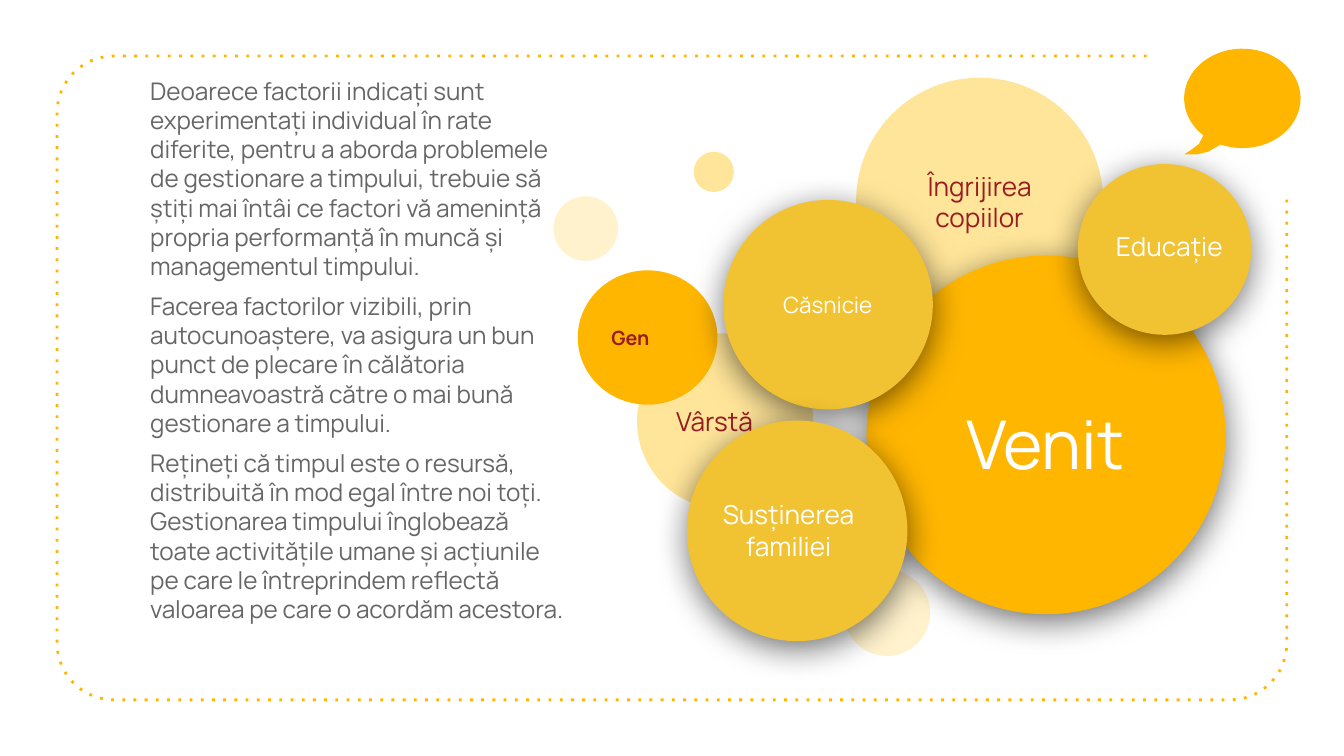
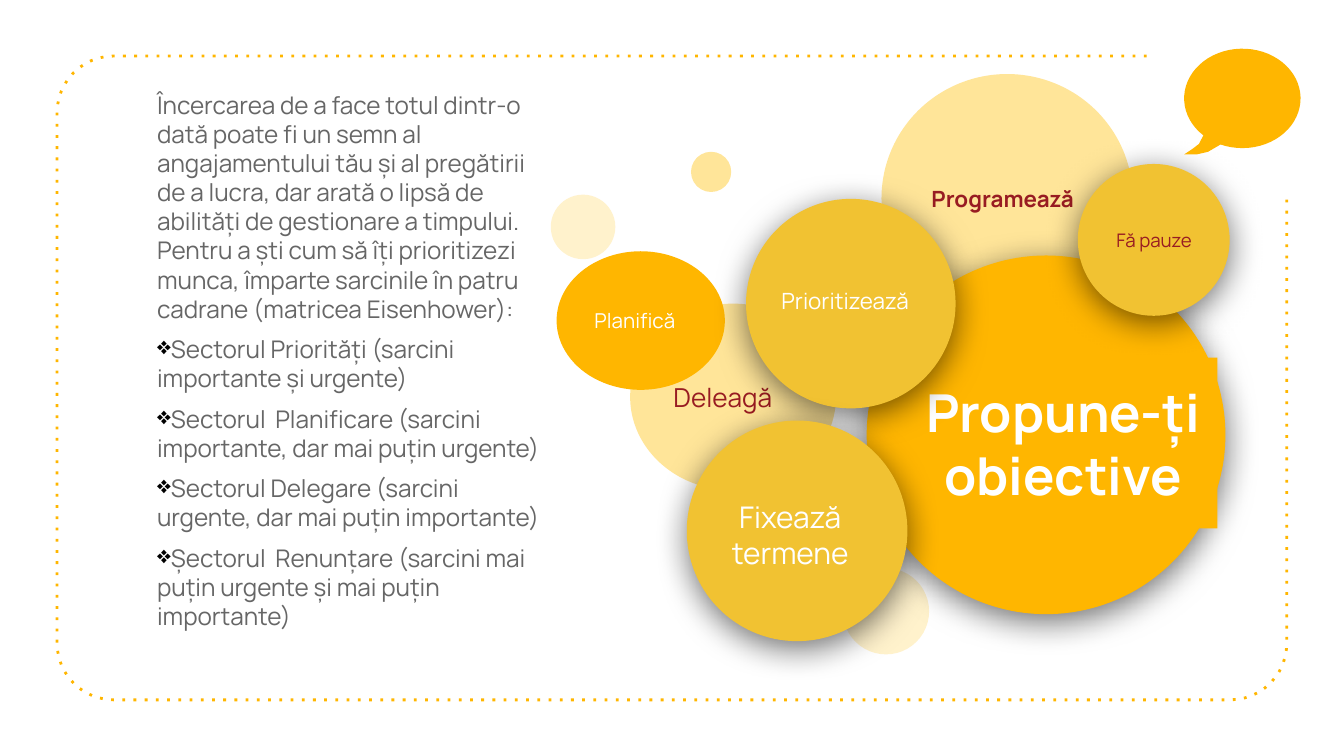
from math import cos, radians, sin

from lxml import etree
from pptx import Presentation
from pptx.dml.color import RGBColor
from pptx.enum.shapes import MSO_SHAPE
from pptx.enum.text import MSO_ANCHOR, PP_ALIGN
from pptx.oxml.ns import qn
from pptx.util import Cm, Pt

ELLIPSE, RECTANGLE = MSO_SHAPE.OVAL, MSO_SHAPE.RECTANGLE
TOP, MIDDLE = MSO_ANCHOR.TOP, MSO_ANCHOR.MIDDLE
LEFT, CENTER = PP_ALIGN.LEFT, PP_ALIGN.CENTER

FONT = "Manrope"
AMBER, GOLD, SAND, CREAM = "FFB600", "F1C232", "FFE599", "FFF2CC"
WHITE, BLACK, GREY, WINE = "FFFFFF", "000000", "666666", "981C22"


def color(code):
    return RGBColor.from_string(code)


def add_node(parent, tag, **attributes):
    return etree.SubElement(parent, qn(tag), **attributes)


def arc(center, radii, start, end, steps):
    """Points in cm along an ellipse; angles run clockwise from the right."""
    angles = [radians(start + (end - start) * i / steps) for i in range(steps + 1)]
    return [(center[0] + radii[0] * cos(a), center[1] + radii[1] * sin(a)) for a in angles]


class Board:
    """Shared style and the slide being drawn; positions are in cm."""

    def __init__(self):
        self.deck = Presentation()
        self.deck.slide_width, self.deck.slide_height = Cm(25.4), Cm(14.29)
        self.page = None

    def new_page(self):
        self.page = self.deck.slides.add_slide(self.deck.slide_layouts[6])
        background = self.page.background.fill
        background.solid()
        background.fore_color.rgb = color(WHITE)
        self.frame()

    def paint(self, shape, fill):
        shape.shadow.inherit = False
        shape.line.fill.background()
        shape.fill.solid()
        shape.fill.fore_color.rgb = color(fill)

    def outline(self, points, closed):
        points = [(Cm(x), Cm(y)) for x, y in points]
        builder = self.page.shapes.build_freeform(*points[0])
        builder.add_line_segments(points[1:], close=closed)
        return builder.convert_to_shape()

    def frame(self):
        left, top, right, bottom, radius = 1.08, 1.06, 24.32, 13.23, 1.07
        corners = [
            (left + radius, top + radius, 270),
            (left + radius, bottom - radius, 180),
            (right - radius, bottom - radius, 90),
        ]
        points = [(21.67, top)]
        for x, y, start in corners:
            points += arc((x, y), (radius, radius), start, start - 90, 12)
        points.append((right, 3.7))
        border = self.outline(points, closed=False)
        border.shadow.inherit = False
        border.fill.background()
        border.line.color.rgb = color(AMBER)
        border.line.width = Pt(1.5)
        add_node(border.element.spPr.find(qn("a:ln")), "a:prstDash", val="dot")

    def speech_bubble(self):
        body = arc((23.48, 1.86), (1.1, 0.94), 132, 472, 60)
        tail = [(22.83, 2.87), (22.61, 2.92), (22.38, 2.92), (22.53, 2.82), (22.66, 2.72)]
        self.paint(self.outline(body + tail, closed=True), AMBER)

    def shape(self, kind, place, fill):
        shape = self.page.shapes.add_shape(kind, *map(Cm, place))
        self.paint(shape, fill)
        return shape

    def circle(self, place, fill):
        return self.shape(ELLIPSE, place, fill)

    def raised_circle(self, place, fill):
        effects = self.circle(place, fill).element.spPr.find(qn("a:effectLst"))
        shadow = add_node(effects, "a:outerShdw", blurRad=str(Pt(18)), dist=str(Pt(4)),
                          dir="5400000", algn="bl", rotWithShape="0")
        add_node(add_node(shadow, "a:srgbClr", val=BLACK), "a:alpha", val="54000")

    def text_box(self, place):
        return self.page.shapes.add_textbox(*map(Cm, place))

    def label(self, box, text, size, tint=WHITE, bold=False, align=CENTER, anchor=MIDDLE):
        frame = box.text_frame
        frame.text = text
        frame.word_wrap = True
        frame.vertical_anchor = anchor
        frame.margin_left = frame.margin_right = Cm(0.25)
        frame.margin_top = frame.margin_bottom = Cm(0.25)
        for para in frame.paragraphs:
            para.alignment = align
            for span in para.runs:
                span.font.name = FONT
                span.font.size = Pt(size)
                span.font.bold = bold
                span.font.color.rgb = color(tint)

    def body(self, place, paragraphs, bullets=()):
        box = self.text_box(place)
        self.label(box, "\n".join([*paragraphs, *bullets]), 13, GREY, align=LEFT, anchor=TOP)
        for number, para in enumerate(box.text_frame.paragraphs):
            para.space_before = Pt(6)
            if number >= len(paragraphs):
                self.bullet(para)

    def bullet(self, para):
        settings = para._p.get_or_add_pPr()
        settings.set("marL", "0")
        settings.set("indent", str(Cm(-0.23)))
        add_node(add_node(settings, "a:buClr"), "a:srgbClr", val=BLACK)
        add_node(settings, "a:buChar", char="❖")

    def cluster(self, dots, flat, goal, raised):
        # Pale dots, then flat labelled circles
        for place, fill in dots:
            self.circle(place, fill)
        for place, fill, text, style in flat:
            self.label(self.circle(place, fill), text, **style)
        # Main circle with its label panel
        self.raised_circle((16.38, 4.83, 6.78, 6.78), AMBER)
        width, text, style = goal
        self.label(self.shape(RECTANGLE, (17.17, 6.76, width, 3.23), AMBER), text, **style)
        # Raised circles in front
        for place, label_place, text, style in raised:
            self.raised_circle(place, GOLD)
            self.label(self.text_box(label_place), text, **style)


def factors_page(board):
    board.new_page()
    board.cluster(
        dots=[
            ((15.95, 10.77, 1.63, 1.63), CREAM),
            ((10.46, 3.71, 1.22, 1.22), CREAM),
            ((13.11, 2.87, 0.76, 0.76), SAND),
        ],
        flat=[
            ((12.04, 6.3, 3.33, 3.33), SAND, "Vârstă", dict(size=14, tint=WINE, align=LEFT)),
            ((16.18, 1.47, 4.67, 4.67), SAND, "Îngrijirea copiilor", dict(size=14, tint=WINE)),
            ((10.92, 5.11, 2.64, 2.54), AMBER, "Gen",
             dict(size=10.5, tint=WINE, bold=True, align=LEFT)),
        ],
        goal=(5.18, "Venit", dict(size=36)),
        raised=[
            ((13.67, 3.78, 3.96, 3.96), (14.3, 4.44, 2.69, 2.62), "Căsnicie", dict(size=12)),
            ((12.98, 7.95, 4.17, 4.17), (13.28, 8.71, 3.25, 2.62), "Susținerea familiei",
             dict(size=14)),
            ((20.37, 3.1, 3.28, 3.23), (20.6, 3.48, 3, 2.36), "Educație", dict(size=14)),
        ],
    )
    board.body((2.59, 1.19, 8.35, 11.91), [
        "Deoarece factorii indicați sunt experimentați individual în rate diferite, pentru a "
        "aborda problemele de gestionare a timpului, trebuie să știți mai întâi ce factori vă "
        "amenință propria performanță în muncă și managementul timpului.",
        "Facerea factorilor vizibili, prin autocunoaștere, va asigura un bun punct de plecare "
        "în călătoria dumneavoastră către o mai bună gestionare a timpului.",
        "Rețineți că timpul este o resursă, distribuită în mod egal între noi toți. "
        "Gestionarea timpului înglobează toate activitățile umane și acțiunile pe care le "
        "întreprindem reflectă valoarea pe care o acordăm acestora.",
    ])
    board.speech_bubble()


def priorities_page(board):
    board.new_page()
    board.cluster(
        dots=[
            ((15.93, 10.74, 1.63, 1.63), CREAM),
            ((10.41, 3.68, 1.22, 1.22), CREAM),
            ((13.06, 2.87, 0.76, 0.76), SAND),
        ],
        flat=[
            ((11.91, 5.74, 3.89, 3.53), SAND, "Deleagă", dict(size=14, tint=WINE, align=LEFT)),
            ((16.66, 1.4, 4.75, 4.7), SAND, "Programează",
             dict(size=12, tint=WINE, bold=True, align=LEFT)),
            ((10.52, 4.75, 3.18, 2.62), AMBER, "Planifică", dict(size=11, align=LEFT)),
        ],
        goal=(5.84, "Propune-ți obiective", dict(size=28, bold=True)),
        raised=[
            ((14.1, 3.76, 3.96, 3.96), (14.3, 4.37, 3.35, 2.62), "Prioritizează", dict(size=12)),
            ((12.98, 7.95, 4.17, 4.17), (13.31, 8.71, 3.25, 2.79), "Fixează termene",
             dict(size=16)),
            ((20.37, 3.1, 2.87, 2.87), (20.83, 3.58, 1.96, 1.91), "Fă pauze",
             dict(size=10, tint=WINE)),
        ],
    )
    board.speech_bubble()
    board.body((2.72, 1.45, 7.87, 11.51), [
        "Încercarea de a face totul dintr-o dată poate fi un semn al angajamentului tău și al "
        "pregătirii de a lucra, dar arată o lipsă de abilități de gestionare a timpului. "
        "Pentru a ști cum să îți prioritizezi munca, împarte sarcinile în patru cadrane "
        "(matricea Eisenhower):",
    ], bullets=[
        "Sectorul Priorități (sarcini importante și urgente)",
        "Sectorul  Planificare (sarcini importante, dar mai puțin urgente)",
        "Sectorul Delegare (sarcini urgente, dar mai puțin importante)",
        "Șectorul  Renunțare (sarcini mai puțin urgente și mai puțin importante)",
    ])


def main():
    board = Board()
    factors_page(board)
    priorities_page(board)
    board.deck.save("out.pptx")


if __name__ == "__main__":
    main()
